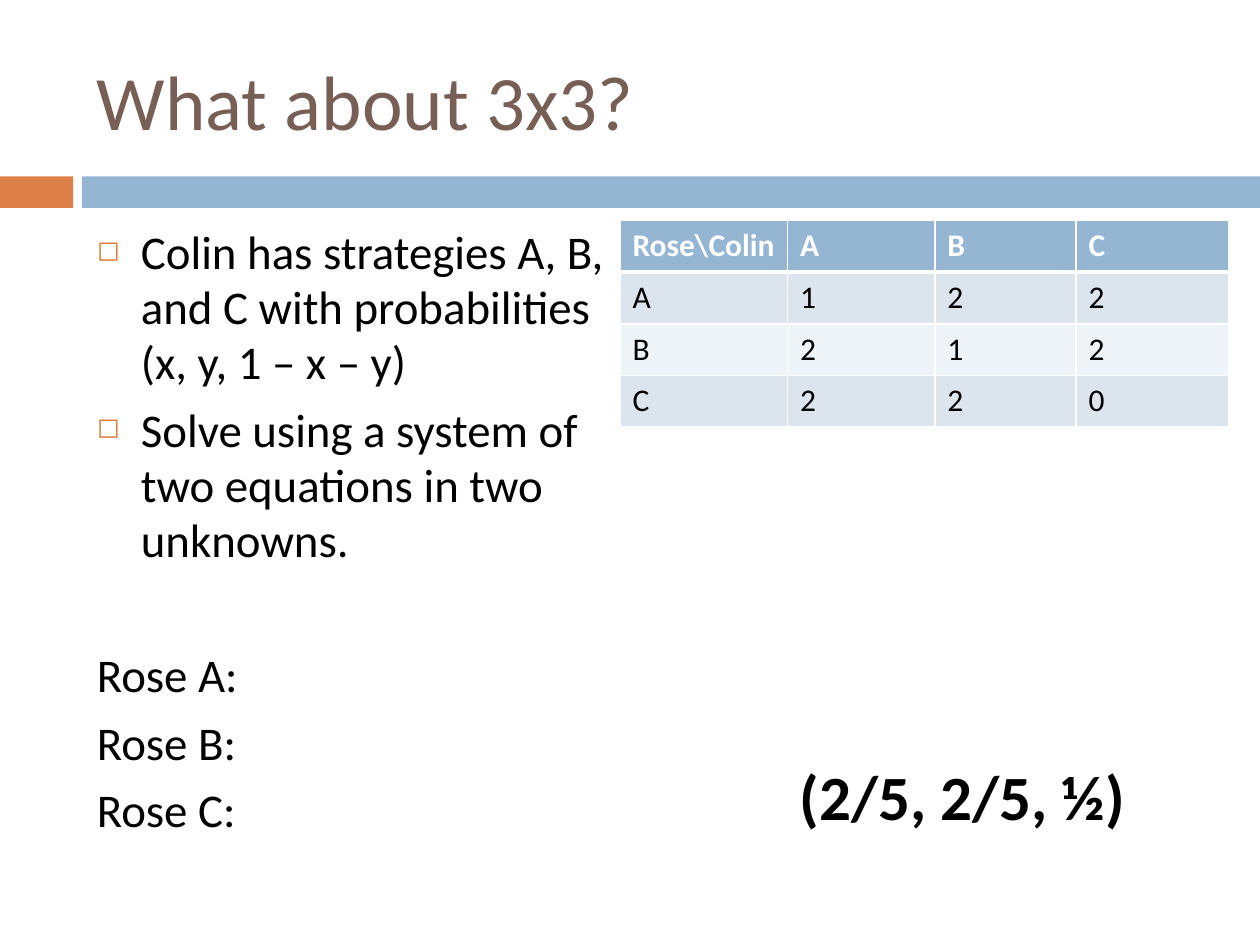
import pptx
import pptx.dml.color
import pptx.enum.shapes
import pptx.enum.text
import pptx.oxml
import pptx.oxml.ns
import pptx.util
from pptx.util import Inches

RGBColor = pptx.dml.color.RGBColor
BLACK = RGBColor(0x00, 0x00, 0x00)
WHITE = RGBColor(0xFF, 0xFF, 0xFF)
BROWN = RGBColor(0x77, 0x5F, 0x55)
ORANGE = RGBColor(0xDD, 0x80, 0x47)
BLUE = RGBColor(0x94, 0xB6, 0xD2)
BAND_DARK = RGBColor(0xDC, 0xE5, 0xEE)
BAND_LIGHT = RGBColor(0xEE, 0xF3, 0xF7)


class SlideBuilder:
    """Hold the slide and its text style, and add each kind of element."""

    font_name = "Calibri"

    def __init__(self, slide):
        self.slide = slide

    def style(self, paragraph, size, color=BLACK, bold=False):
        font = paragraph.font
        font.name = self.font_name
        font.size = pptx.util.Pt(size)
        font.bold = bold
        font.color.rgb = color

    def bar(self, left, width, color):
        shape = self.slide.shapes.add_shape(
            pptx.enum.shapes.MSO_SHAPE.RECTANGLE,
            Inches(left), Inches(1.4), Inches(width), Inches(0.25))
        shape.shadow.inherit = False
        shape.fill.solid()
        shape.fill.fore_color.rgb = color
        shape.line.fill.background()

    def text_frame(self, left, top, width, height):
        shape = self.slide.shapes.add_textbox(
            Inches(left), Inches(top), Inches(width), Inches(height))
        shape.text_frame.word_wrap = True
        return shape.text_frame

    def label(self, text, box, size, color=BLACK, bold=False):
        frame = self.text_frame(*box)
        frame.vertical_anchor = pptx.enum.text.MSO_ANCHOR.MIDDLE
        frame.text = text
        self.style(frame.paragraphs[0], size, color, bold)

    def bullet(self, paragraph):
        properties = paragraph._p.get_or_add_pPr()
        properties.set("marL", str(Inches(0.35)))
        properties.set("indent", str(-Inches(0.35)))
        namespace = pptx.oxml.ns.nsdecls("a")
        for xml in (
            f'<a:buClr {namespace}><a:srgbClr val="{ORANGE}"/></a:buClr>',
            f'<a:buSzPct {namespace} val="60000"/>',
            f'<a:buChar {namespace} char="◻"/>',
        ):
            properties.append(pptx.oxml.parse_xml(xml))

    def body(self, bullets, lines, box):
        frame = self.text_frame(*box)
        frame.text = "\n".join(bullets + lines)
        for index, paragraph in enumerate(frame.paragraphs):
            starts_lines = index == len(bullets)
            paragraph.line_spacing = 0.98
            paragraph.space_before = pptx.util.Pt(46 if starts_lines else 7)
            if index < len(bullets):
                self.bullet(paragraph)
            self.style(paragraph, 26.8)

    def cell_borders(self, cell, widths):
        properties = cell._tc.get_or_add_tcPr()
        namespace = pptx.oxml.ns.nsdecls("a")
        for position, (side, width) in enumerate(widths.items()):
            properties.insert(position, pptx.oxml.parse_xml(
                f'<a:ln{side} {namespace} w="{pptx.util.Pt(width)}"><a:solidFill>'
                f'<a:srgbClr val="{WHITE}"/></a:solidFill></a:ln{side}>'))

    def table(self, rows, left, top, column_widths, row_height):
        table = self.slide.shapes.add_table(
            len(rows), len(column_widths), Inches(left), Inches(top),
            Inches(sum(column_widths)), Inches(row_height * len(rows))).table
        for column, width in zip(table.columns, column_widths):
            column.width = Inches(width)
        for row_index, row in enumerate(rows):
            header = row_index == 0
            band = BAND_DARK if row_index % 2 else BAND_LIGHT
            for column_index, text in enumerate(row):
                cell = table.cell(row_index, column_index)
                cell.text = text
                cell.fill.solid()
                cell.fill.fore_color.rgb = BLUE if header else band
                self.style(cell.text_frame.paragraphs[0], 18,
                           WHITE if header else BLACK, header)
                self.cell_borders(cell, {"L": 1, "R": 1,
                                         "T": 3 if row_index == 1 else 1,
                                         "B": 3 if header else 1})


def main():
    presentation = pptx.Presentation()
    presentation.slide_width = Inches(10)
    presentation.slide_height = Inches(7.5)
    builder = SlideBuilder(
        presentation.slides.add_slide(presentation.slide_layouts[6]))

    builder.bar(0, 0.58, ORANGE)
    builder.bar(0.65, 9.35, BLUE)
    builder.label("What about 3x3?", (0.67, 0.25, 8.92, 1.08), 44, BROWN)
    builder.body(
        ["Colin has strategies A, B, and C with probabilities (x, y, 1 – x – y)",
         "Solve using a system of two equations in two unknowns."],
        ["Rose A:", "Rose B:", "Rose C:"],
        (0.67, 1.74, 4.25, 5))
    builder.table(
        [("Rose\\Colin", "A", "B", "C"),
         ("A", "1", "2", "2"),
         ("B", "2", "1", "2"),
         ("C", "2", "2", "0")],
        4.92, 1.75, (1.33, 1.17, 1.12, 1.21), 0.41)
    builder.label("(2/5, 2/5, ½)", (6.25, 5.96, 3.08, 0.71), 36, bold=True)

    presentation.save("out.pptx")


if __name__ == "__main__":
    main()
